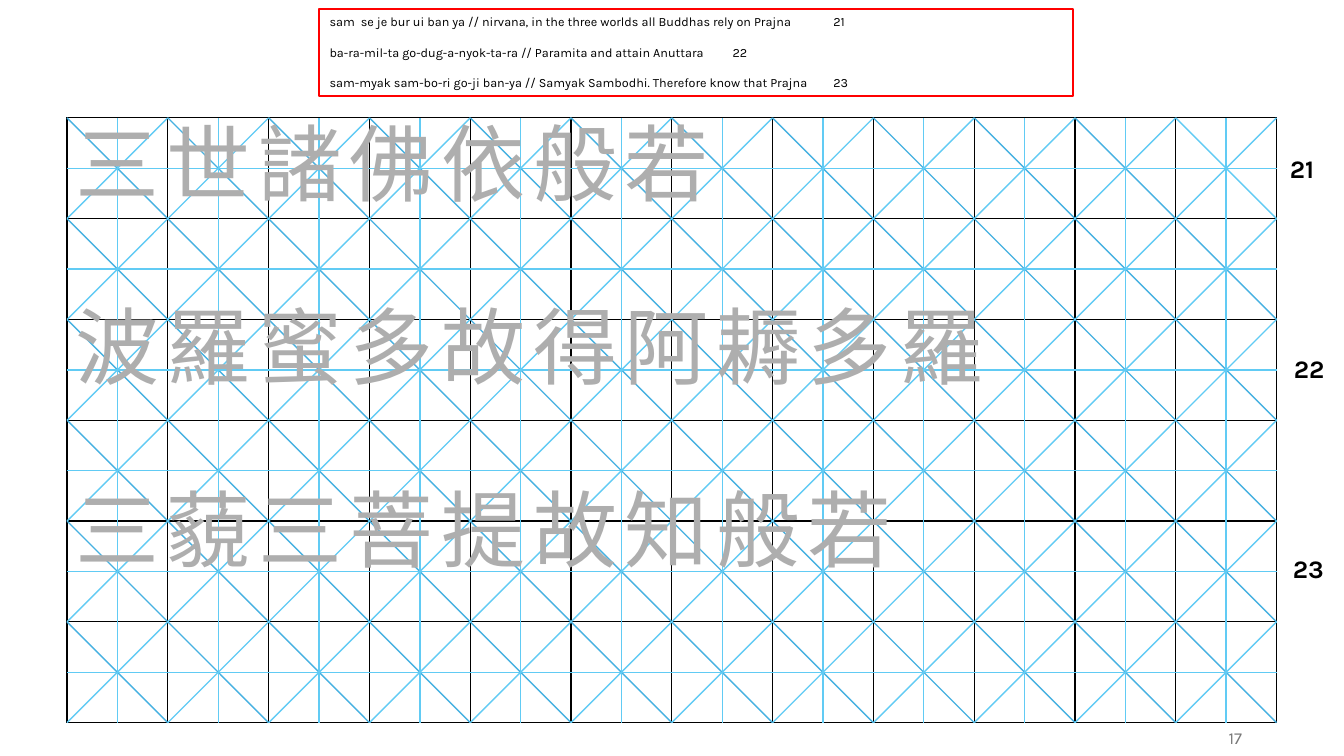
"""Build a calligraphy practice slide with a guide grid and three chant lines."""
import dataclasses

import lxml.etree
import pptx
import pptx.dml.color
import pptx.enum.shapes
import pptx.enum.text
import pptx.oxml.ns
import pptx.util

Cm = pptx.util.Cm
Pt = pptx.util.Pt
qn = pptx.oxml.ns.qn
Align = pptx.enum.text.PP_ALIGN
Anchor = pptx.enum.text.MSO_ANCHOR


@dataclasses.dataclass(frozen=True)
class Theme:
    """Colours, fonts and type sizes."""
    ink: str = "000000"
    deep: str = "46B1E1"
    light: str = "61CBF4"
    frame: str = "FF0000"
    trace: str = "AEAEAE"
    page: str = "797979"
    latin: str = "Karla"
    brush: str = "Calibri"
    glyph: int = 60
    gap: int = 24
    note: int = 9
    mark: int = 18
    foot: int = 12


THEME = Theme()
COLS, ROWS, STEP = 12, 6, 2.54
LEFT, TOP = 1.69, 2.97

CHANT = ["三世諸佛依般若", "波羅蜜多故得阿耨多羅", "三藐三菩提故知般若"]
NOTES = [
    "sam  se je bur ui ban ya // nirvana, in the three worlds all Buddhas rely on Prajna\t21",
    "ba-ra-mil-ta go-dug-a-nyok-ta-ra // Paramita and attain Anuttara\t22",
    "sam-myak sam-bo-ri go-ji ban-ya // Samyak Sambodhi. Therefore know that Prajna\t23",
]
MARKS = [("21", 32.26, 3.73), ("22", 32.36, 8.79), ("23", 32.33, 13.82)]


def tint(text):
    """Turn a hex string into a colour."""
    return pptx.dml.color.RGBColor.from_string(text)


def style(run, face, size, color, bold=False):
    """Format one run."""
    run.font.name = face
    run.font.size = Pt(size)
    run.font.color.rgb = tint(color)
    run.font.bold = bold


def add_rule(slide, start, end, color):
    """Draw a line between two points given in grid cells."""
    spots = [Cm(base + STEP * cell)
             for point in (start, end) for base, cell in zip((LEFT, TOP), point)]
    line = slide.shapes.add_connector(pptx.enum.shapes.MSO_CONNECTOR.STRAIGHT, *spots)
    line.line.color.rgb = tint(color)
    line.line.width = Pt(1)
    lxml.etree.SubElement(line._element.spPr, qn("a:effectLst"))


def edge_cell(cell):
    """Give a cell four thin borders and no fill."""
    props = cell._tc.get_or_add_tcPr()
    for side in ("a:lnL", "a:lnR", "a:lnT", "a:lnB"):
        edge = lxml.etree.SubElement(props, qn(side), w=str(Pt(1)))
        fill = lxml.etree.SubElement(edge, qn("a:solidFill"))
        lxml.etree.SubElement(fill, qn("a:srgbClr"), val=THEME.ink)
    cell.fill.background()


def add_grid(slide):
    """Add the table of practice squares."""
    table = slide.shapes.add_table(ROWS, COLS, Cm(LEFT), Cm(TOP),
                                   Cm(COLS * STEP), Cm(ROWS * STEP)).table
    table.first_row = False
    table.horz_banding = False
    for cell in table.iter_cells():
        edge_cell(cell)


def add_guides(slide):
    """Draw the slanted lines and the centre lines of the squares."""
    slants = []
    for shift in range(1 - ROWS, COLS):
        col, row = max(shift, 0), max(-shift, 0)
        span = min(COLS - col, ROWS - row)
        slants.append((col, row, col + span, row + span))
    for col, row, right, low in slants:
        color = THEME.light if col == COLS - 1 else THEME.deep
        add_rule(slide, (col, row), (right, low), color)
    for col, row, right, low in slants:
        add_rule(slide, (COLS - col, row), (COLS - right, low), THEME.light)
    for col in range(COLS):
        add_rule(slide, (col + 0.5, 0), (col + 0.5, ROWS), THEME.light)
    for row in range(ROWS):
        add_rule(slide, (0, row + 0.5), (COLS, row + 0.5), THEME.light)


def add_box(slide, left, top, width, height):
    """Add an empty wrapping text box and return its frame."""
    frame = slide.shapes.add_textbox(Cm(left), Cm(top), Cm(width), Cm(height)).text_frame
    frame.word_wrap = True
    return frame


def add_label(slide, text, place, size, color, bold=False):
    """Add a short one-line label and return its frame."""
    frame = add_box(slide, *place)
    frame.text = text
    style(frame.paragraphs[0].runs[0], THEME.latin, size, color, bold)
    return frame


def add_chant(slide):
    """Add the large characters to trace."""
    frame = add_box(slide, 1.65, TOP, 30.05, 13.08)
    for count, verse in enumerate(CHANT):
        para = frame.add_paragraph() if count else frame.paragraphs[0]
        para.line_spacing = 0.9
        para.space_after = Pt(66)
        for sign in " ".join(verse):
            run = para.add_run()
            run.text = sign
            style(run, THEME.brush, THEME.gap if sign == " " else THEME.glyph, THEME.trace)


def fill_notes(body):
    """Place the reading notes in the body placeholder."""
    body.left, body.top, body.width, body.height = Cm(8.05), Cm(0.23), Cm(20.96), Cm(2.18)
    frame = body.text_frame
    frame.text = "\n".join(NOTES)
    frame.auto_size = pptx.enum.text.MSO_AUTO_SIZE.NONE
    frame.vertical_anchor = Anchor.TOP
    for para in frame.paragraphs:
        para.space_before = Pt(0)
        para.space_after = Pt(11)
        props = para._p.get_or_add_pPr()
        props.set("marL", "0")
        props.set("indent", "0")
        lxml.etree.SubElement(props, qn("a:buNone"))
        tabs = lxml.etree.SubElement(props, qn("a:tabLst"))
        lxml.etree.SubElement(tabs, qn("a:tab"), pos=str(Cm(15.24)), algn="l")
        style(para.runs[0], THEME.latin, THEME.note, THEME.ink)


def add_frame(slide):
    """Draw the outline around the notes."""
    shape = slide.shapes.add_shape(pptx.enum.shapes.MSO_SHAPE.RECTANGLE,
                                   Cm(8.05), Cm(0.23), Cm(19), Cm(2.18))
    shape.shadow.inherit = False
    shape.fill.background()
    shape.line.color.rgb = tint(THEME.frame)
    shape.line.width = Pt(1.5)


def main():
    """Build and save the slide."""
    deck = pptx.Presentation()
    deck.slide_width, deck.slide_height = Cm(33.87), Cm(19.05)
    slide = deck.slides.add_slide(deck.slide_layouts[1])
    title = slide.shapes.title._element
    title.getparent().remove(title)
    fill_notes(slide.placeholders[1])
    add_grid(slide)
    add_guides(slide)
    add_chant(slide)
    add_frame(slide)
    for text, left, top in MARKS:
        add_label(slide, text, (left, top, 1.42, 1.02), THEME.mark, THEME.ink, True)
    foot = add_label(slide, "17", (23.93, 18.08, 7.62, 1.02), THEME.foot, THEME.page)
    foot.vertical_anchor = Anchor.MIDDLE
    foot.paragraphs[0].alignment = Align.RIGHT
    deck.save("out.pptx")


if __name__ == "__main__":
    main()
